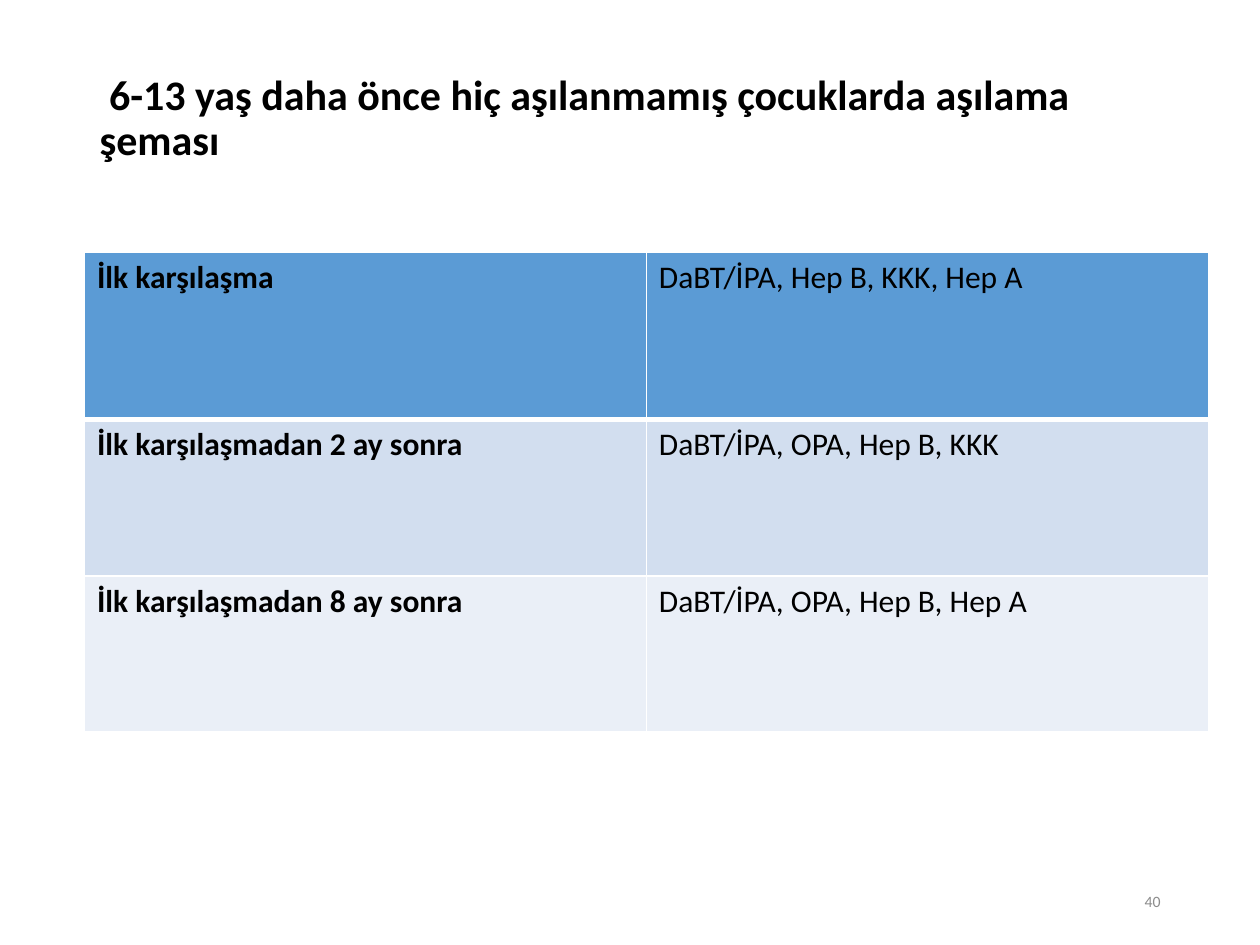
from pptx import Presentation
from pptx.dml.color import RGBColor as Rgb
from pptx.enum.text import MSO_ANCHOR as Anchor, PP_ALIGN as Align
from pptx.oxml.ns import qn
from pptx.util import Inches, Pt
from lxml.etree import SubElement as Sub

HUES = {"ink": "000000", "gray": "8C8C8C", "line": "FFFFFF",
        "head": "5B9BD5", "band": "D2DEEF", "pale": "EAEFF7"}
ROWS = [
    ("head", 1.33, "İlk karşılaşma", "DaBT/İPA, Hep B, KKK, Hep A"),
    ("band", 1.24, "İlk karşılaşmadan 2 ay sonra", "DaBT/İPA, OPA, Hep B, KKK"),
    ("pale", 1.24, "İlk karşılaşmadan 8 ay sonra", "DaBT/İPA, OPA, Hep B, Hep A"),
]


def hue(name):
    """Return the named colour."""
    return Rgb.from_string(HUES[name])


def write(frame, text, size, bold=False, ink="ink", align=Align.LEFT):
    """Set one paragraph of text and format its runs."""
    frame.text = text
    par = frame.paragraphs[0]
    par.alignment = align
    for run in par.runs:
        font = run.font
        font.name, font.size, font.bold = "Calibri", Pt(size), bold
        font.color.rgb = hue(ink)
    return par


def place(shape, left, top, width, height):
    """Move and size a shape."""
    shape.left, shape.top = Inches(left), Inches(top)
    shape.width, shape.height = Inches(width), Inches(height)


def edge(cell, sides):
    """Draw cell borders from a dict of side to width in points."""
    props = cell._tc.get_or_add_tcPr()
    for side, width in sides.items():
        line = Sub(props, qn(f"a:ln{side}"), w=str(Pt(width)))
        fill = Sub(line, qn("a:solidFill"))
        Sub(fill, qn("a:srgbClr"), val=HUES["line"])


def add_title(slide):
    """Fill the title placeholder."""
    title = slide.shapes.title
    place(title, 0.69, 0.4, 8.62, 1.45)
    frame = title.text_frame
    frame.word_wrap = True
    frame.vertical_anchor = Anchor.MIDDLE
    frame.margin_bottom = Inches(0.41)
    par = write(frame, " 6-13 yaş daha önce hiç aşılanmamış çocuklarda aşılama şeması", 24, True)
    par.line_spacing = 0.9


def add_plan(slide):
    """Add the vaccination table."""
    grid = slide.shapes.add_table(len(ROWS), 2, Inches(0.67), Inches(2),
                                  Inches(8.92), Inches(3.81)).table
    for r, (fill, height, *texts) in enumerate(ROWS):
        grid.rows[r].height = Inches(height)
        for c, text in enumerate(texts):
            cell = grid.cell(r, c)
            write(cell.text_frame, text, 18, c == 0)
            edge(cell, {"L": 1, "R": 1, "T": 3 if r == 1 else 1,
                        "B": 3 if r == 0 else 1})
            cell.fill.solid()
            cell.fill.fore_color.rgb = hue(fill)


def add_page(slide):
    """Add the page number."""
    box = slide.shapes.add_textbox(Inches(7.06), Inches(6.95), Inches(2.25), Inches(0.4))
    frame = box.text_frame
    frame.word_wrap = True
    frame.vertical_anchor = Anchor.MIDDLE
    write(frame, "40", 9, ink="gray", align=Align.RIGHT)


def main():
    """Build and save the slide."""
    deck = Presentation()
    deck.slide_width, deck.slide_height = Inches(10), Inches(7.5)
    slide = deck.slides.add_slide(deck.slide_layouts[5])
    add_title(slide)
    add_plan(slide)
    add_page(slide)
    deck.save("out.pptx")


if __name__ == "__main__":
    main()
